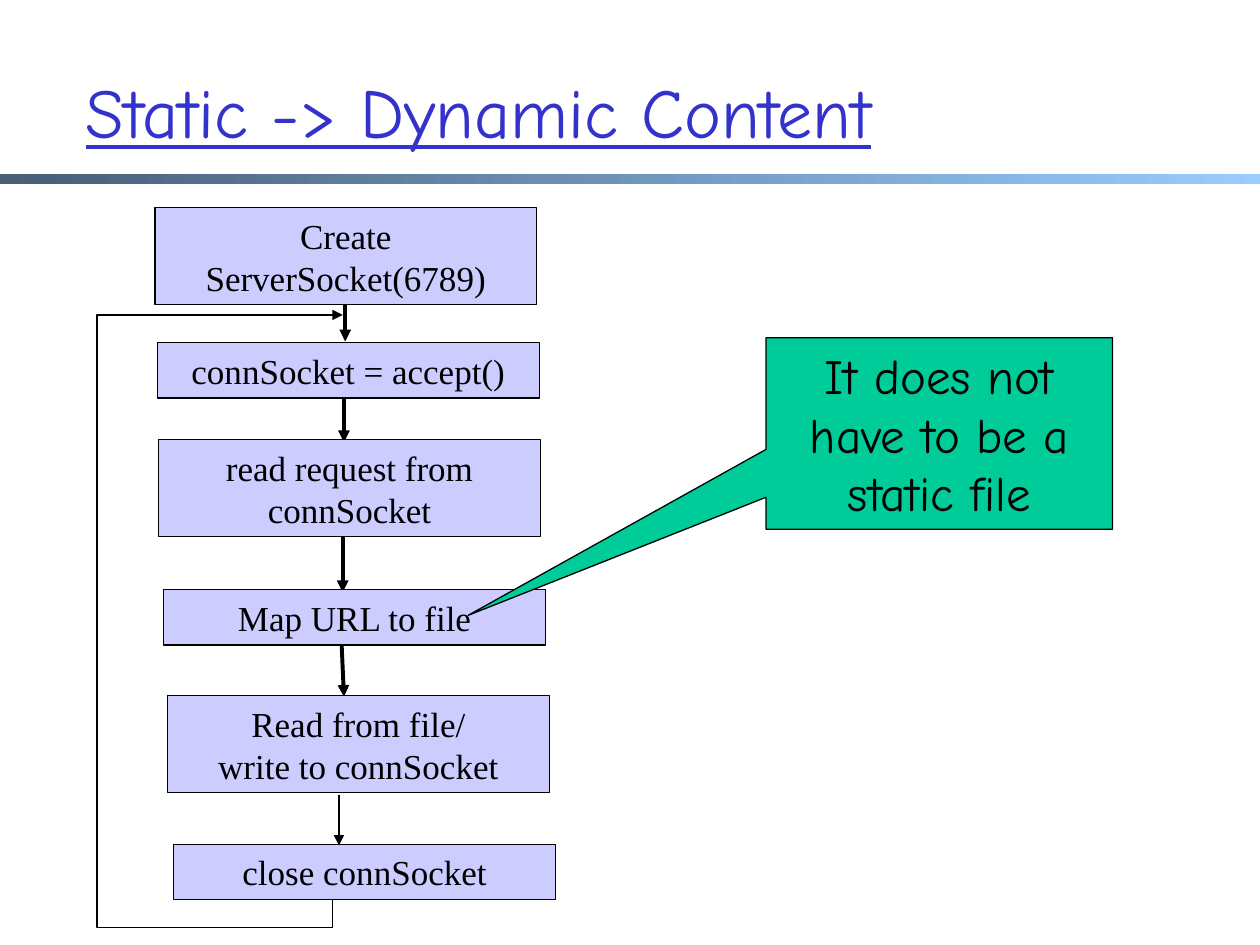
from lxml import etree
from pptx import Presentation
from pptx.dml.color import RGBColor
from pptx.enum.shapes import MSO_CONNECTOR as Connector, MSO_SHAPE as Shape
from pptx.enum.text import MSO_ANCHOR as Anchor, PP_ALIGN as Align
from pptx.oxml.ns import qn
from pptx.util import Inches, Pt

COLORS = {
    "ink": "000000",
    "title": "3333CC",
    "step": "CCCCFF",
    "callout": "00CC99",
    "bar_start": "475E76",
    "bar_end": "99CCFF",
}


def rgb(name):
    return RGBColor.from_string(COLORS[name])


class FlowSlide:
    heading_font = "Comic Neue"
    step_font = "Times New Roman"
    step_width = 3.03

    def __init__(self, slide):
        self.slide = slide
        self.shapes = slide.shapes

    def add_text(self, frame, lines, font, size, color, align, underline=None):
        frame.word_wrap = True
        frame.vertical_anchor = Anchor.MIDDLE
        paragraph = frame.paragraphs[0]
        paragraph.alignment = align
        for index, line in enumerate(lines):
            if index:
                paragraph.add_line_break()
            run = paragraph.add_run()
            run.text = line
            run.font.name = font
            run.font.size = Pt(size)
            run.font.underline = underline
            run.font.color.rgb = rgb(color)

    def title(self, text, left, top, width, height):
        title = self.shapes.title
        title.left, title.top = Inches(left), Inches(top)
        title.width, title.height = Inches(width), Inches(height)
        self.add_text(title.text_frame, [text], self.heading_font, 40, "title",
                      Align.LEFT, underline=True)

    def shape(self, kind, left, top, width, height):
        shape = self.shapes.add_shape(
            kind, Inches(left), Inches(top), Inches(width), Inches(height))
        shape.shadow.inherit = False
        return shape

    def bar(self, top, height):
        bar = self.shape(Shape.RECTANGLE, 0, top, 10, height)
        bar.line.fill.background()
        bar.fill.gradient()
        bar.fill.gradient_angle = 0
        for stop, name in zip(bar.fill.gradient_stops, ("bar_start", "bar_end")):
            stop.color.rgb = rgb(name)

    def filled(self, kind, fill, left, top, width, height, lines, font, size):
        shape = self.shape(kind, left, top, width, height)
        shape.fill.solid()
        shape.fill.fore_color.rgb = rgb(fill)
        self.outline(shape, 0.75)
        self.add_text(shape.text_frame, lines, font, size, "ink", Align.CENTER)
        return shape

    def step(self, left, top, height, lines):
        self.filled(Shape.RECTANGLE, "step", left, top, self.step_width, height,
                    lines, self.step_font, 20)

    def callout(self, left, top, width, height, text, tip):
        callout = self.filled(Shape.RECTANGULAR_CALLOUT, "callout", left, top,
                              width, height, [text], self.heading_font, 28)
        callout.adjustments[0], callout.adjustments[1] = tip

    def outline(self, shape, weight):
        shape.line.color.rgb = rgb("ink")
        shape.line.width = Pt(weight)

    def arrowhead(self, shape):
        line = shape.element.spPr.find(qn("a:ln"))
        etree.SubElement(line, qn("a:tailEnd"), type="triangle")

    def arrow(self, start, end, weight):
        arrow = self.shapes.add_connector(
            Connector.STRAIGHT, *(Inches(value) for value in start + end))
        self.outline(arrow, weight)
        self.arrowhead(arrow)
        etree.SubElement(arrow.element.spPr, qn("a:effectLst"))

    def loop(self, points):
        first, *others = [(Inches(x), Inches(y)) for x, y in points]
        builder = self.shapes.build_freeform(*first, scale=1.0)
        builder.add_line_segments(others, close=False)
        loop = builder.convert_to_shape()
        loop.shadow.inherit = False
        loop.fill.background()
        self.outline(loop, 0.75)
        self.arrowhead(loop)


def main():
    deck = Presentation()
    deck.slide_width, deck.slide_height = Inches(10), Inches(7.5)
    flow = FlowSlide(deck.slides.add_slide(deck.slide_layouts[5]))

    # Heading and gradient rule
    flow.bar(1.38, 0.08)
    flow.title("Static -> Dynamic Content", 0.58, 0.25, 8.5, 1.25)

    # Arrows run under the steps they join
    for start, end, weight in [
        ((2.74, 2.28), (2.74, 2.71), 2.25),
        ((2.73, 3.13), (2.73, 3.51), 2.25),
        ((2.72, 4.18), (2.72, 4.7), 2.25),
        ((2.71, 5.08), (2.73, 5.53), 2.25),
        ((2.69, 6.31), (2.69, 6.71), 1.5),
    ]:
        flow.arrow(start, end, weight)

    # Server steps
    one_line, two_lines = 0.44, 0.77
    for left, top, height, lines in [
        (1.23, 1.65, two_lines, ["Create ServerSocket(6789)"]),
        (1.25, 2.72, one_line, ["connSocket = accept()"]),
        (1.26, 3.49, two_lines, ["read request from connSocket"]),
        (1.3, 4.68, one_line, ["Map URL to file"]),
        (1.33, 5.52, two_lines, ["Read from file/", "write to connSocket"]),
        (1.38, 6.7, one_line, ["close connSocket"]),
    ]:
        flow.step(left, top, height, lines)

    # Return to accept the next connection
    flow.loop([(2.64, 7.14), (2.64, 7.36), (0.77, 7.36), (0.77, 2.5), (2.72, 2.5)])

    # Remark on the mapping step
    flow.callout(6.08, 2.68, 2.75, 1.52, "It does not have to be a static file",
                 tip=(-1.36, 0.95))

    deck.save("out.pptx")


if __name__ == "__main__":
    main()
